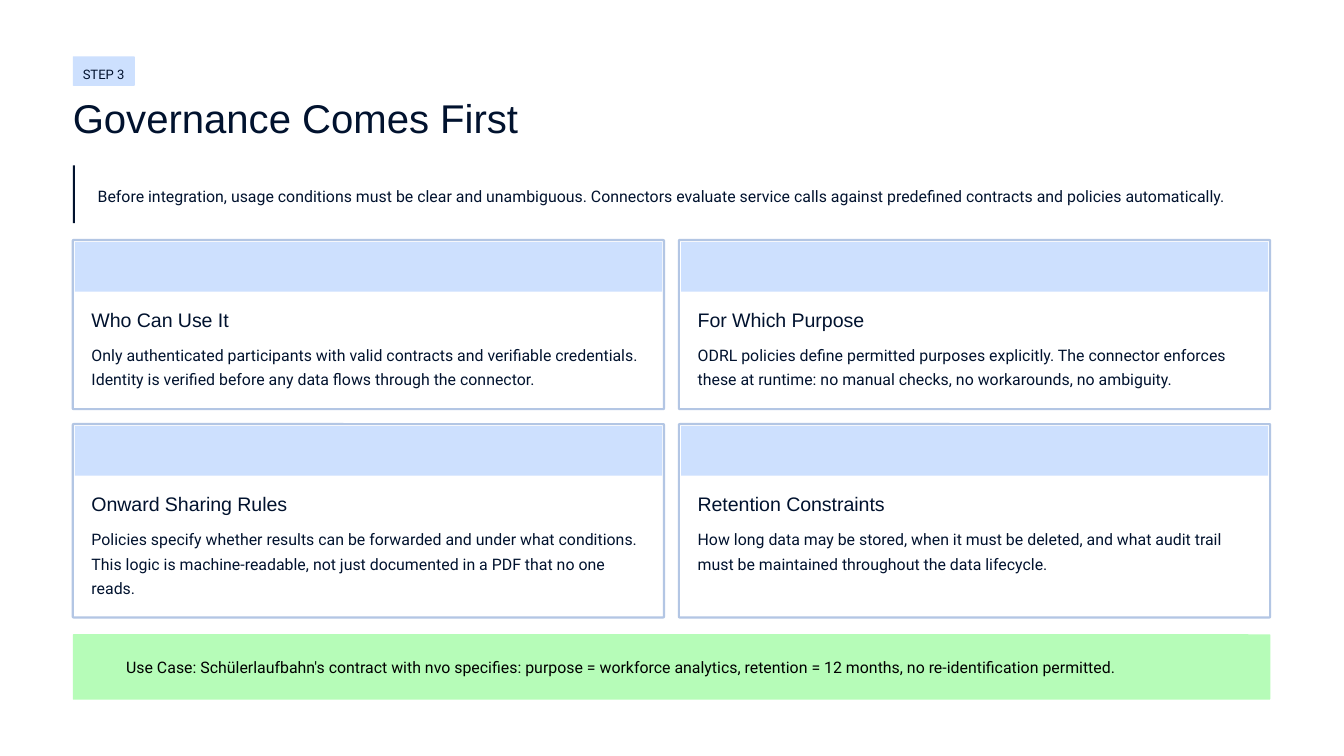
import pptx
import pptx.dml.color
import pptx.enum.shapes
import pptx.enum.text
import pptx.util

Pt = pptx.util.Pt
RECTANGLE = pptx.enum.shapes.MSO_SHAPE.RECTANGLE
ROUNDED = pptx.enum.shapes.MSO_SHAPE.ROUNDED_RECTANGLE

COLORS = {
    "white": "FFFFFF",
    "black": "000000",
    "navy": "01122E",
    "pale_blue": "CDE0FE",
    "border": "B3C6E4",
    "green": "B6FCB8",
}
HEADING_FONT = "Arial"
BODY_FONT = "Roboto"
BODY_SIZE = 8.5
CORNER = 0.45

LEFT = 39
CONTENT_WIDTH = 641.5
CARD_GAP = 8
CARD_WIDTH = (CONTENT_WIDTH - CARD_GAP) / 2
CARDS_TOP = 128.6

CARD_ROWS = [
    (90.6, [
        ("Who Can Use It",
         "Only authenticated participants with valid contracts and verifiable credentials. "
         "Identity is verified before any data flows through the connector."),
        ("For Which Purpose",
         "ODRL policies define permitted purposes explicitly. The connector enforces "
         "these at runtime: no manual checks, no workarounds, no ambiguity."),
    ]),
    (103.6, [
        ("Onward Sharing Rules",
         "Policies specify whether results can be forwarded and under what conditions. "
         "This logic is machine-readable, not just documented in a PDF that no one reads."),
        ("Retention Constraints",
         "How long data may be stored, when it must be deleted, and what audit trail "
         "must be maintained throughout the data lifecycle."),
    ]),
]


def rgb(name):
    return pptx.dml.color.RGBColor.from_string(COLORS[name])


def place(shape, left, top, width, height):
    shape.left, shape.top = Pt(left), Pt(top)
    shape.width, shape.height = Pt(width), Pt(height)


def add_panel(slide, box, fill, kind=RECTANGLE, border=None):
    shape = slide.shapes.add_shape(kind, *map(Pt, box))
    shape.shadow.inherit = False
    shape.fill.solid()
    shape.fill.fore_color.rgb = rgb(fill)
    if kind == ROUNDED:
        shape.adjustments[0] = CORNER / min(box[2:])
    if border:
        shape.line.color.rgb = rgb(border)
        shape.line.width = Pt(1.12)
    else:
        shape.line.fill.background()


def write(shape, text, size, font=BODY_FONT, spacing=1.27, color="navy"):
    frame = shape.text_frame
    frame.text = text
    frame.word_wrap = True
    frame.auto_size = pptx.enum.text.MSO_AUTO_SIZE.NONE
    frame.vertical_anchor = pptx.enum.text.MSO_ANCHOR.TOP
    frame.margin_left = frame.margin_right = frame.margin_top = frame.margin_bottom = 0
    paragraph = frame.paragraphs[0]
    paragraph.alignment = pptx.enum.text.PP_ALIGN.LEFT
    paragraph.line_spacing = spacing
    run_font = paragraph.runs[0].font
    run_font.name = font
    run_font.size = Pt(size)
    run_font.color.rgb = rgb(color)


def add_text(slide, box, text, size, **style):
    write(slide.shapes.add_textbox(*map(Pt, box)), text, size, **style)


def add_header(slide, left, top, width):
    add_panel(slide, (left, top, 33.2, 15.8), "pale_blue", ROUNDED)
    add_text(slide, (left + 5.4, top + 3, 58, 11), "STEP 3", 7)
    title = slide.shapes.title
    place(title, left, top + 18.8, width, 27.4)
    write(title, "Governance Comes First", 21.5, font=HEADING_FONT, spacing=1.04)


def add_intro(slide, left, top, width, height):
    add_panel(slide, (left, top, 1.2, height), "navy")
    add_text(slide, (left + 13.3, top + 8.6, width, 13.7),
             "Before integration, usage conditions must be clear and unambiguous. "
             "Connectors evaluate service calls against predefined contracts and "
             "policies automatically.", BODY_SIZE)


def add_card(slide, left, top, width, height, heading, body):
    inset, padding = 1.1, 10
    text_width = width - 2 * padding
    add_panel(slide, (left, top, width, height), "white", ROUNDED, "border")
    add_panel(slide, (left + inset, top + inset, width - 2 * inset, 26.6), "pale_blue")
    add_text(slide, (left + padding, top + 35.7, text_width, 13.7), heading, 10.5,
             font=HEADING_FONT, spacing=1.04)
    add_text(slide, (left + padding, top + 54, text_width, height - 64), body, BODY_SIZE)


def add_card_grid(slide, left, top):
    for height, cards in CARD_ROWS:
        for column, (heading, body) in enumerate(cards):
            card_left = left + column * (CARD_WIDTH + CARD_GAP)
            add_card(slide, card_left, top, CARD_WIDTH, height, heading, body)
        top += height + CARD_GAP


def add_use_case(slide, left, top, width, height):
    add_panel(slide, (left, top, width, height), "green", ROUNDED)
    add_text(slide, (left + 28.6, top + 10, width - 40, 13.7),
             "Use Case: Schülerlaufbahn's contract with nvo specifies: purpose = workforce "
             "analytics, retention = 12 months, no re-identification permitted.",
             BODY_SIZE, color="black")


def main():
    presentation = pptx.Presentation()
    presentation.slide_width, presentation.slide_height = Pt(720), Pt(405)
    slide = presentation.slides.add_slide(presentation.slide_layouts[5])
    slide.background.fill.solid()
    slide.background.fill.fore_color.rgb = rgb("white")
    add_header(slide, LEFT, 30.2, 282)
    add_intro(slide, LEFT, 88.6, CONTENT_WIDTH, 31)
    add_card_grid(slide, LEFT, CARDS_TOP)
    add_use_case(slide, LEFT, 339.8, CONTENT_WIDTH, 35)
    presentation.save("out.pptx")


if __name__ == "__main__":
    main()
